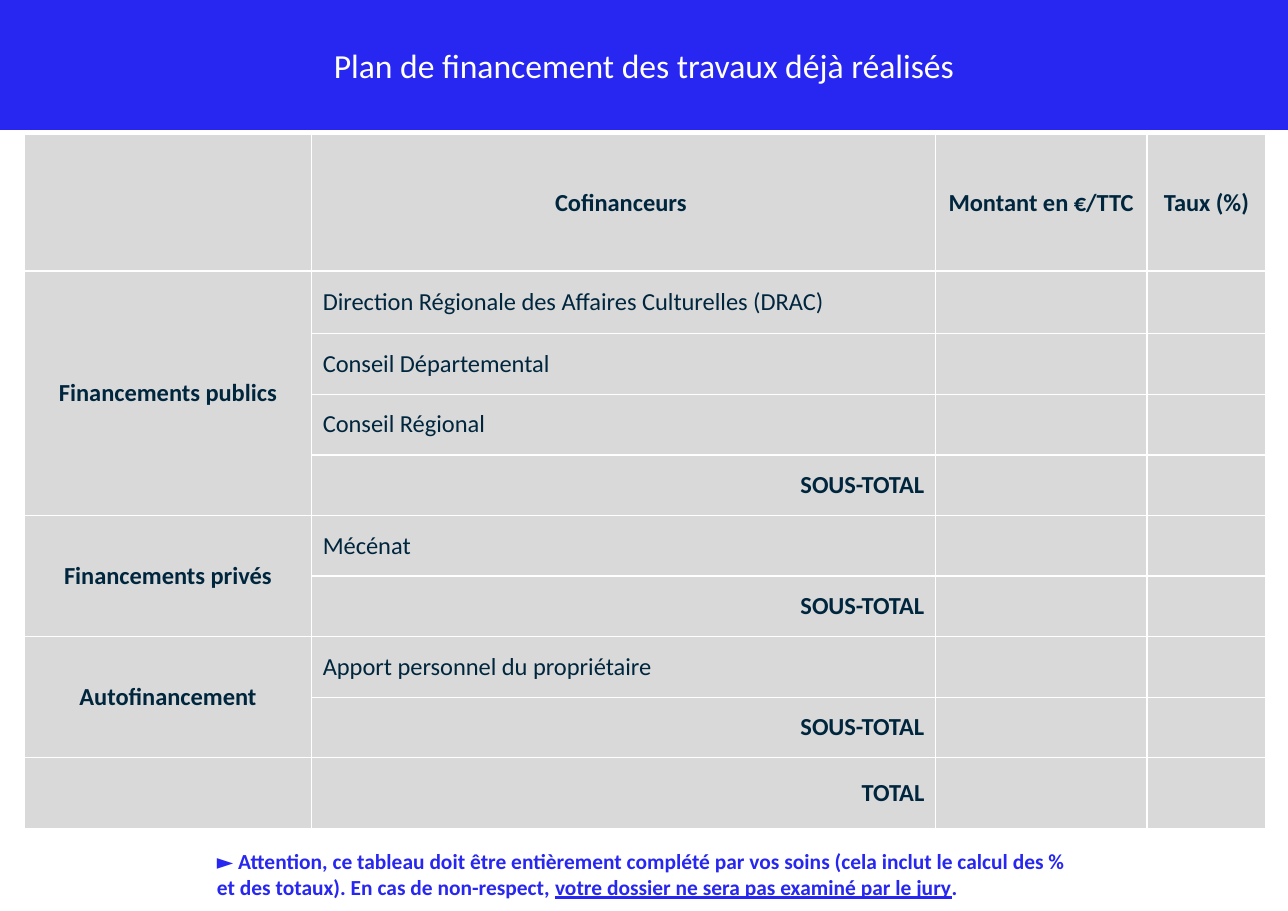
from dataclasses import dataclass

from lxml.etree import SubElement
from pptx import Presentation
from pptx.dml.color import RGBColor
from pptx.enum.text import MSO_ANCHOR, MSO_AUTO_SIZE, PP_ALIGN
from pptx.oxml.ns import qn
from pptx.slide import Slide
from pptx.table import Table, _Cell
from pptx.text.text import TextFrame
from pptx.util import Inches, Pt

BLUE = RGBColor(0x27, 0x27, 0xF1)
NAVY = RGBColor(0x00, 0x26, 0x3E)
GREY = RGBColor(0xD9, 0xD9, 0xD9)
WHITE = RGBColor(0xFF, 0xFF, 0xFF)
FONT = "Calibri"

COLUMN_WIDTHS = [2.61, 5.66, 1.92, 1.08]
HEADER_HEIGHT, FIRST_HEIGHT, ROW_HEIGHT, TOTAL_HEIGHT = 1.24, 0.57, 0.55, 0.64
HEADERS = ["", "Cofinanceurs ", "Montant en €/TTC", "Taux (%)"]


@dataclass(frozen=True)
class FundingGroup:
    name: str
    funders: list[str]


FUNDING_GROUPS = [
    FundingGroup("Financements publics", [
        "Direction Régionale des Affaires Culturelles (DRAC)",
        "Conseil Départemental",
        "Conseil Régional",
    ]),
    FundingGroup("Financements privés", ["Mécénat"]),
    FundingGroup("Autofinancement", ["Apport personnel du propriétaire"]),
]


def write(frame: TextFrame, text: str, *, size: float = 16, color: RGBColor = NAVY,
          bold: bool = False, underline: bool = False,
          align: PP_ALIGN = PP_ALIGN.LEFT, space_before: float = 0) -> None:
    """Append a formatted run to the first paragraph."""
    paragraph = frame.paragraphs[0]
    paragraph.alignment = align
    paragraph.space_before = Pt(space_before)
    run = paragraph.add_run()
    run.text = text
    font = run.font
    font.name, font.size, font.bold, font.underline = FONT, Pt(size), bold, underline
    font.color.rgb = color


def format_cell(cell: _Cell) -> None:
    cell.vertical_anchor = MSO_ANCHOR.MIDDLE
    properties = cell._tc.get_or_add_tcPr()
    for side in ("a:lnL", "a:lnR", "a:lnT", "a:lnB"):
        border = SubElement(properties, qn(side), w=str(Pt(0.96)))
        fill = SubElement(border, qn("a:solidFill"))
        SubElement(fill, qn("a:srgbClr"), val=str(WHITE))
    cell.fill.solid()
    cell.fill.fore_color.rgb = GREY


def fill_cell(table: Table, row: int, column: int, text: str, align: PP_ALIGN,
              bold: bool = True) -> None:
    if text:
        write(table.cell(row, column).text_frame, text, bold=bold, align=align,
              space_before=2.6)


def add_funding_table(slide: Slide) -> None:
    body_count = sum(len(group.funders) + 1 for group in FUNDING_GROUPS)
    heights = [HEADER_HEIGHT, FIRST_HEIGHT, *[ROW_HEIGHT] * (body_count - 1), TOTAL_HEIGHT]
    table = slide.shapes.add_table(
        len(heights), len(COLUMN_WIDTHS), Inches(0.22), Inches(1.22),
        Inches(sum(COLUMN_WIDTHS)), Inches(sum(heights))).table
    table.first_row = table.horz_banding = False
    for column, width in zip(table.columns, COLUMN_WIDTHS):
        column.width = Inches(width)
    for row, height in zip(table.rows, heights):
        row.height = Inches(height)
    for cell in table.iter_cells():
        format_cell(cell)

    for column, header in enumerate(HEADERS):
        fill_cell(table, 0, column, header, PP_ALIGN.CENTER)
    row = 1
    for group in FUNDING_GROUPS:
        subtotal_row = row + len(group.funders)
        table.cell(row, 0).merge(table.cell(subtotal_row, 0))
        fill_cell(table, row, 0, group.name, PP_ALIGN.CENTER)
        for offset, funder in enumerate(group.funders):
            fill_cell(table, row + offset, 1, funder, PP_ALIGN.LEFT, bold=False)
        fill_cell(table, subtotal_row, 1, "SOUS-TOTAL", PP_ALIGN.RIGHT)
        row = subtotal_row + 1
    fill_cell(table, row, 1, "TOTAL", PP_ALIGN.RIGHT)


def add_title(slide: Slide, width: int) -> None:
    title = slide.shapes.title
    title.left, title.top, title.width, title.height = 0, 0, width, Inches(1.18)
    title.fill.solid()
    title.fill.fore_color.rgb = BLUE
    frame = title.text_frame
    frame.auto_size = MSO_AUTO_SIZE.NONE
    frame.vertical_anchor = MSO_ANCHOR.MIDDLE
    write(frame, "Plan de financement des travaux déjà réalisés",
          size=22, color=WHITE, align=PP_ALIGN.CENTER)


def add_warning(slide: Slide) -> None:
    frame = slide.shapes.add_textbox(
        Inches(1.87), Inches(7.65), Inches(7.95), Inches(0.57)).text_frame
    frame.word_wrap = True
    for text, underline in [
        ("► Attention, ce tableau doit être entièrement complété par vos soins "
         "(cela inclut le calcul des % et des totaux). En cas de non-respect, ", False),
        ("votre dossier ne sera pas examiné par le jury", True),
        (".", False),
    ]:
        write(frame, text, size=14, color=BLUE, bold=True, underline=underline)


def main() -> None:
    presentation = Presentation()
    presentation.slide_width = Inches(11.69)
    presentation.slide_height = Inches(8.27)
    slide = presentation.slides.add_slide(presentation.slide_layouts.get_by_name("Title Only"))
    add_title(slide, presentation.slide_width)
    add_funding_table(slide)
    add_warning(slide)
    presentation.save("out.pptx")


if __name__ == "__main__":
    main()
